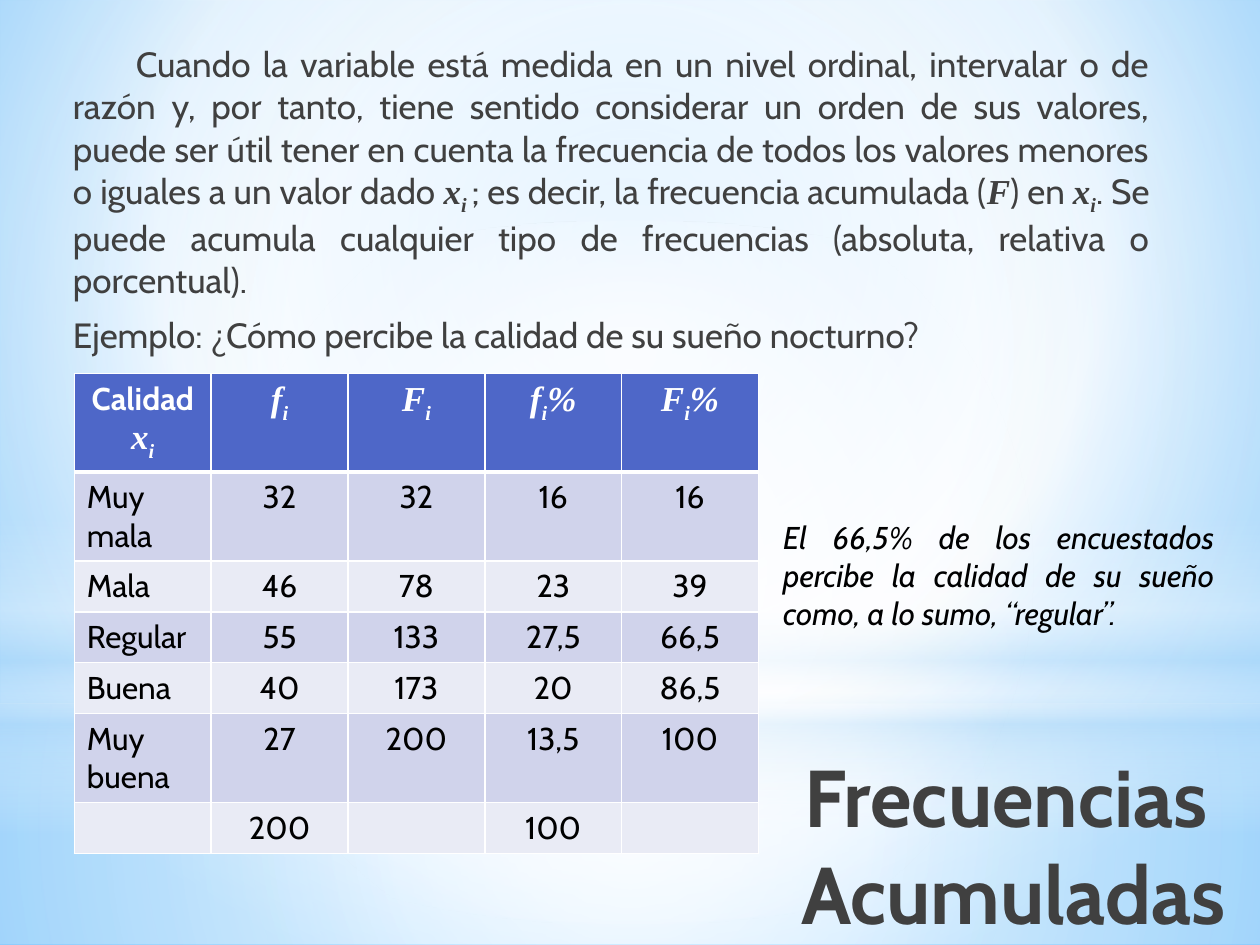
from dataclasses import dataclass, field

from lxml import etree
from pptx import Presentation
from pptx.dml.color import RGBColor
from pptx.enum.shapes import MSO_SHAPE
from pptx.enum.text import PP_ALIGN
from pptx.oxml.ns import qn
from pptx.util import Pt

RECTANGLE, OVAL = MSO_SHAPE.RECTANGLE, MSO_SHAPE.OVAL
LEFT, CENTER, RIGHT, JUSTIFY = PP_ALIGN.LEFT, PP_ALIGN.CENTER, PP_ALIGN.RIGHT, PP_ALIGN.JUSTIFY


@dataclass(frozen=True)
class Theme:
    text_font: str = "Cabin"
    math_font: str = "Times New Roman"
    gray: str = "404040"
    black: str = "000000"
    white: str = "FFFFFF"
    pale_blue: str = "B4DCFA"
    header: str = "4E67C8"
    bands: tuple = ("D0D3EB", "E9EBF5")
    title_size: int = 46
    body_size: int = 20
    table_size: int = 18


THEME = Theme()


@dataclass(frozen=True)
class Box:
    left: float
    top: float
    width: float
    height: float

    def lengths(self) -> tuple:
        return tuple(Pt(value) for value in (self.left, self.top, self.width, self.height))


@dataclass(frozen=True)
class Gradient:
    """Stops are (position %, colour, opacity %); without a focus it runs downwards."""
    stops: tuple
    focus: tuple | None = (50, 50, 50, 50)


@dataclass(frozen=True)
class Glow:
    shape: MSO_SHAPE
    box: Box
    gradient: Gradient


@dataclass(frozen=True)
class Span:
    text: str
    color: str
    size: int = THEME.body_size
    style: dict = field(default_factory=dict)
    subscript: bool = False


@dataclass(frozen=True)
class Para:
    spans: list
    align: PP_ALIGN = LEFT
    layout: dict = field(default_factory=dict)


BACKGROUND = Gradient(((0, "9ED5FF", 100), (60, THEME.white, 100), (100, "5BB9FF", 100)),
                      (20, 10, 20, 60))
GLOWS = [
    Glow(RECTANGLE, Box(0, 402, 720, 138), Gradient(
        ((0, THEME.white, 91), (37, THEME.white, 76), (100, THEME.pale_blue, 79)))),
    Glow(RECTANGLE, Box(0, 0, 720, 402), Gradient(
        ((0, THEME.white, 89), (48, THEME.white, 62), (100, THEME.pale_blue, 79)))),
    Glow(RECTANGLE, Box(0, 296.5, 720, 180), Gradient(
        ((0, THEME.white, 0), (29, THEME.white, 30), (45, THEME.pale_blue, 40),
         (55, THEME.white, 26), (65, THEME.pale_blue, 60), (100, THEME.white, 0)), None)),
    Glow(OVAL, Box(0, 126, 720, 402), Gradient(
        ((0, THEME.white, 100), (56, THEME.white, 0)))),
]

TITLE_BOX = Box(427.5, 423.5, 280, 90)
BODY_BOX = Box(31, 21, 633, 198.5)
TABLE_BOX = Box(42.5, 213.5, 391, 272)
NOTE_BOX = Box(440.5, 292.5, 260.5, 72.5)
ROW_HEIGHTS = (53.5, 51, 29, 29, 29, 51, 29)
ROWS = [
    ("Muy mala", "32", "32", "16", "16"),
    ("Mala", "46", "78", "23", "39"),
    ("Regular", "55", "133", "27,5", "66,5"),
    ("Buena", "40", "173", "20", "86,5"),
    ("Muy buena", "27", "200", "13,5", "100"),
    ("", "200", "", "100", ""),
]


def symbol(letter: str, color: str, index: str = "", suffix: str = "") -> list[Span]:
    """Spans of a bold italic variable with an optional subscript index."""
    style = {"name": THEME.math_font, "bold": True, "italic": True}
    parts = ((letter, False), (index, True), (suffix, False))
    return [Span(text, color, style=style, subscript=low) for text, low in parts if text]


def gradient_xml(gradient: Gradient):
    fill = etree.Element(qn("a:gradFill"), rotWithShape="1")
    stops = etree.SubElement(fill, qn("a:gsLst"))
    for position, color, opacity in gradient.stops:
        stop = etree.SubElement(stops, qn("a:gs"), pos=str(position * 1000))
        tint = etree.SubElement(stop, qn("a:srgbClr"), val=color)
        if opacity < 100:
            etree.SubElement(tint, qn("a:alpha"), val=str(opacity * 1000))
    if gradient.focus is None:
        etree.SubElement(fill, qn("a:lin"), ang="5400000", scaled="0")
    else:
        path = etree.SubElement(fill, qn("a:path"), path="circle")
        sides = {side: str(value * 1000) for side, value in zip("ltrb", gradient.focus)}
        etree.SubElement(path, qn("a:fillToRect"), sides)
    return fill


def apply_gradient(fill, properties, gradient: Gradient) -> None:
    fill.solid()
    solid = properties.find(qn("a:solidFill"))
    properties.replace(solid, gradient_xml(gradient))


def draw_glow(page, glow: Glow) -> None:
    shape = page.shapes.add_shape(glow.shape, *glow.box.lengths())
    shape.shadow.inherit = False
    shape.line.fill.background()
    apply_gradient(shape.fill, shape.element.spPr, glow.gradient)


def write_text(frame, paras: list[Para]) -> None:
    for number, para in enumerate(paras):
        line = frame.add_paragraph() if number else frame.paragraphs[0]
        line.alignment = para.align
        for name, value in para.layout.items():
            setattr(line, name, value)
        for span in para.spans:
            run = line.add_run()
            run.text = span.text
            values = {"name": THEME.text_font, "size": Pt(span.size), **span.style}
            for name, value in values.items():
                setattr(run.font, name, value)
            run.font.color.rgb = RGBColor.from_string(span.color)
            if span.subscript:
                run._r.get_or_add_rPr().set("baseline", "-25000")


def draw_text(page, box: Box, paras: list[Para], indent: float = 0) -> None:
    frame = page.shapes.add_textbox(*box.lengths()).text_frame
    frame.word_wrap = True
    write_text(frame, paras)
    for line in frame.paragraphs if indent else ():
        line._p.get_or_add_pPr().set("marL", str(Pt(indent)))


def style_cell(cell, color: str, bottom_width: float) -> None:
    properties = cell._tc.get_or_add_tcPr()
    for side, width in (("L", 1), ("R", 1), ("T", 1), ("B", bottom_width)):
        edge = etree.SubElement(properties, qn(f"a:ln{side}"), w=str(Pt(width)))
        edge_fill = etree.SubElement(edge, qn("a:solidFill"))
        etree.SubElement(edge_fill, qn("a:srgbClr"), val=THEME.white)
    cell.fill.solid()
    cell.fill.fore_color.rgb = RGBColor.from_string(color)


def draw_table(page) -> None:
    heading = Span("Calidad ", THEME.white, THEME.table_size, {"bold": True})
    header = [[heading, *symbol("x", THEME.white, "i")]]
    header += [symbol(letter, THEME.white, "i", suffix) for suffix in ("", "%") for letter in "fF"]
    body = [[[Span(text, THEME.black, THEME.table_size)] if text else [] for text in row]
            for row in ROWS]
    table = page.shapes.add_table(len(body) + 1, len(header), *TABLE_BOX.lengths()).table
    for column in table.columns:
        column.width = Pt(TABLE_BOX.width / len(header))
    for row_number, cells in enumerate([header, *body]):
        table.rows[row_number].height = Pt(ROW_HEIGHTS[row_number])
        is_header = row_number == 0
        color = THEME.header if is_header else THEME.bands[(row_number - 1) % 2]
        for column_number, spans in enumerate(cells):
            cell = table.cell(row_number, column_number)
            align = CENTER if is_header or column_number else LEFT
            write_text(cell.text_frame, [Para(spans, align)])
            style_cell(cell, color, 3 if is_header else 1)


def main() -> None:
    deck = Presentation()
    deck.slide_width, deck.slide_height = Pt(720), Pt(540)
    page = deck.slides.add_slide(deck.slide_layouts[6])
    fill = page.background.fill
    fill.solid()
    apply_gradient(fill, page.element.xpath(".//p:bgPr")[0], BACKGROUND)
    for glow in GLOWS:
        draw_glow(page, glow)

    draw_text(page, TITLE_BOX, [Para([Span(
        "Frecuencias \vAcumuladas".split("\v")[0], THEME.gray, THEME.title_size, {"bold": True})],
        RIGHT), Para([Span("Acumuladas", THEME.gray, THEME.title_size, {"bold": True})], RIGHT)])
    spacing = {"space_before": Pt(4), "space_after": Pt(3)}
    explanation = [
        Span("\tCuando la variable está medida en un nivel ordinal, intervalar o de razón y, "
             "por tanto, tiene sentido considerar un orden de sus valores, puede ser útil tener "
             "en cuenta la frecuencia de todos los valores menores o iguales a un valor dado ",
             THEME.gray),
        *symbol("x", THEME.gray, "i "),
        Span("; es decir, la frecuencia acumulada (", THEME.gray),
        *symbol("F", THEME.gray),
        Span(") en ", THEME.gray),
        *symbol("x", THEME.gray, "i"),
        Span(". Se puede acumula cualquier tipo de frecuencias "
             "(absoluta, relativa o porcentual).", THEME.gray),
    ]
    example = [Span("Ejemplo: ¿Cómo percibe la calidad de su sueño nocturno?", THEME.gray)]
    draw_text(page, BODY_BOX, [Para(explanation, JUSTIFY, spacing),
                               Para(example, LEFT, spacing)], indent=3.6)
    draw_table(page)
    draw_text(page, NOTE_BOX, [Para([Span(
        "El 66,5% de los encuestados percibe la calidad de su sueño como, a lo sumo, “regular”. ",
        THEME.black, THEME.table_size, {"italic": True})], JUSTIFY)])
    deck.save("out.pptx")


if __name__ == "__main__":
    main()
